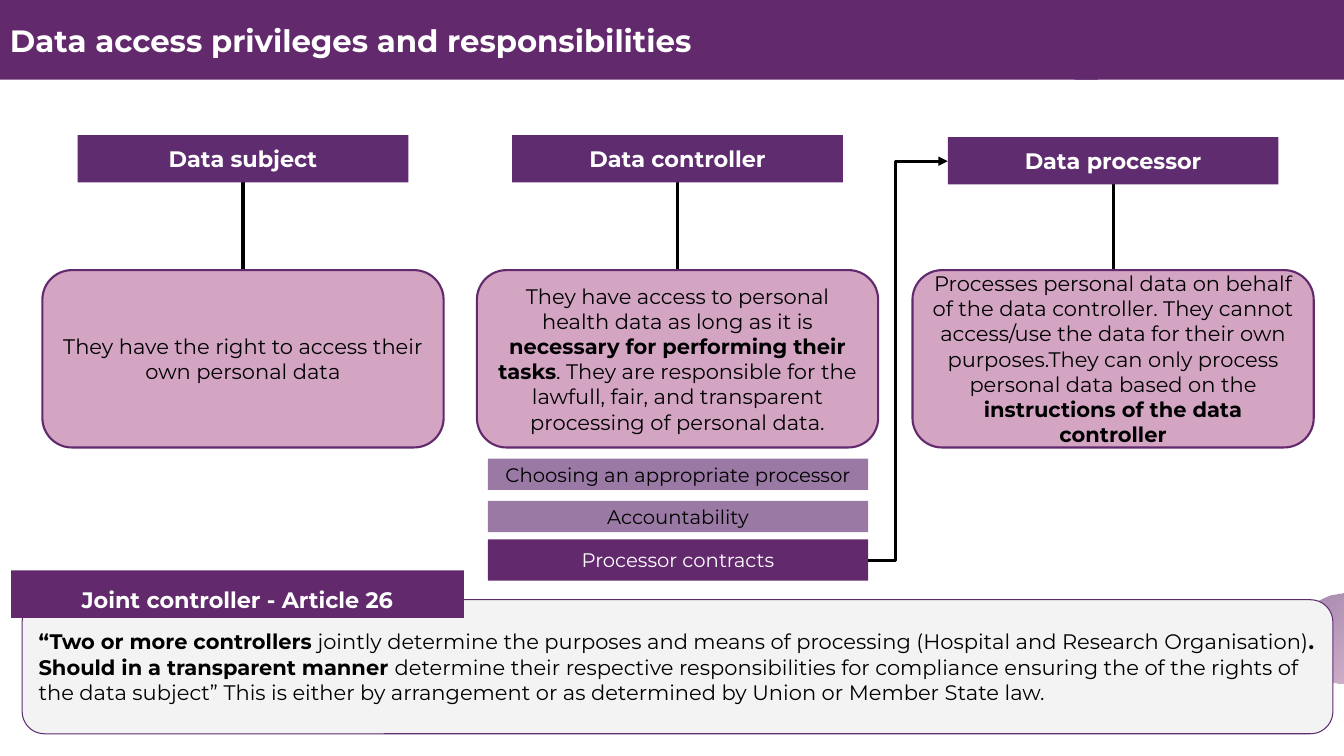
"""Build the slide on data access privileges and responsibilities."""
from dataclasses import dataclass

from lxml.etree import SubElement
from pptx import Presentation
from pptx.dml.color import RGBColor
from pptx.enum.shapes import MSO_CONNECTOR, MSO_SHAPE
from pptx.enum.text import MSO_ANCHOR, PP_ALIGN
from pptx.oxml.ns import qn
from pptx.shapes.autoshape import Shape
from pptx.shapes.connector import Connector
from pptx.util import Pt

PX = 9144
FONT = "Montserrat"
PLUM = RGBColor(0x62, 0x29, 0x6D)
GRAPE = RGBColor(0x5F, 0x2D, 0x6F)
MAUVE = RGBColor(0x9A, 0x7A, 0xA4)
PINK = RGBColor(0xD3, 0xA5, 0xC3)
PALE = RGBColor(0xF3, 0xF3, 0xF3)
WHITE = RGBColor(0xFF, 0xFF, 0xFF)
BLACK = RGBColor(0, 0, 0)


@dataclass
class Run:
    text: str
    bold: bool = False


@dataclass
class Role:
    name: str
    top: int
    site: int
    duty: list[Run]


@dataclass
class Task:
    text: str
    top: int
    high: int
    fill: RGBColor
    ink: RGBColor


ROLES = [
    Role("Data subject", 134, 2, [
        Run("They have the right to access their own personal data")]),
    Role("Data controller", 134, 0, [
        Run("They have access to personal health data as long as it is "),
        Run("necessary for performing their tasks", True),
        Run(". They are responsible for the lawfull, fair, and transparent "
            "processing of personal data.")]),
    Role("Data processor", 136, 0, [
        Run("Processes personal data on behalf of the data controller. They "
            "cannot access/use the data for their own purposes.They can only "
            "process personal data based on the "),
        Run("instructions of the data controller", True)]),
]
TASKS = [
    Task("Choosing an appropriate processor", 455, 31, MAUVE, BLACK),
    Task("Accountability", 497, 31, MAUVE, BLACK),
    Task("Processor contracts", 535, 41, PLUM, WHITE),
]
JOINT = [
    Run("“Two or more controllers", True),
    Run(" jointly determine the purposes and means of processing "
        "(Hospital and Research Organisation)"),
    Run(". Should in a transparent manner ", True),
    Run("determine their respective responsibilities for compliance ensuring "
        "the of the rights of the data subject” This is either by arrangement "
        "or as determined by Union or Member State law."),
]


def add_box(shapes, x: int, y: int, w: int, h: int, fill: RGBColor | None,
            edge: RGBColor | None = None, width: float = 1.5) -> Shape:
    """Add a plain box, rounded when it has an edge."""
    kind = MSO_SHAPE.ROUNDED_RECTANGLE if edge else MSO_SHAPE.RECTANGLE
    box = shapes.add_shape(kind, x * PX, y * PX, w * PX, h * PX)
    box.shadow.inherit = False
    if fill is not None:
        box.fill.solid()
        box.fill.fore_color.rgb = fill
    if edge:
        box.line.color.rgb = edge
        box.line.width = Pt(width)
    else:
        box.line.fill.background()
    return box


def add_text(box: Shape, runs: list[Run], size: int, ink: RGBColor,
             align: PP_ALIGN = PP_ALIGN.CENTER, pad: int = 10, after: int = 0):
    """Write one paragraph of runs in a box and return it."""
    frame = box.text_frame
    frame.word_wrap = True
    frame.vertical_anchor = MSO_ANCHOR.MIDDLE
    frame.margin_left = frame.margin_right = 10 * PX
    frame.margin_top = frame.margin_bottom = pad * PX
    para = frame.paragraphs[0]
    para.alignment = align
    para.space_after = Pt(after)
    for item in runs:
        run = para.add_run()
        run.text = item.text
        font = run.font
        font.name, font.size, font.bold = FONT, Pt(size), item.bold
        font.color.rgb = ink
    return para


def add_link(shapes, kind: MSO_CONNECTOR, x: int, y: int, to_x: int, to_y: int,
             head: bool) -> Connector:
    """Add a black connector, with or without an arrowhead."""
    link = shapes.add_connector(kind, x * PX, y * PX, to_x * PX, to_y * PX)
    link.line.color.rgb = BLACK
    link.line.width = Pt(2.25)
    if head:
        SubElement(link.line._get_or_add_ln(), qn("a:tailEnd"), type="triangle")
    SubElement(link._element.spPr, qn("a:effectLst"))
    return link


def add_orb(shapes) -> None:
    """Add the faded disc at the right edge."""
    orb = shapes.add_shape(MSO_SHAPE.OVAL, 1288 * PX, 589 * PX, 89 * PX, 89 * PX)
    orb.shadow.inherit = False
    orb.line.fill.background()
    props = orb._element.spPr
    grad = SubElement(props, qn("a:gradFill"), rotWithShape="1")
    stops = SubElement(grad, qn("a:gsLst"))
    for pos, tint, alpha in ((0, PINK, 71), (100, GRAPE, 56)):
        stop = SubElement(stops, qn("a:gs"), pos=str(pos * 1000))
        color = SubElement(stop, qn("a:srgbClr"), val=str(tint))
        SubElement(color, qn("a:alpha"), val=str(alpha * 1000))
    shade = SubElement(grad, qn("a:path"), path="circle")
    SubElement(shade, qn("a:fillToRect"), l="100000", t="100000")
    props.insert(2, grad)


def main() -> None:
    """Draw the slide and save it."""
    deck = Presentation()
    deck.slide_width, deck.slide_height = 1333 * PX, 750 * PX
    shapes = deck.slides.add_slide(deck.slide_layouts[6]).shapes

    add_orb(shapes)
    lefts = [42 + 863 * col // 2 for col in range(len(ROLES))]
    stems = [add_link(shapes, MSO_CONNECTOR.STRAIGHT, x + 199, role.top,
                      x + 199, 444, col < 2)
             for col, (x, role) in enumerate(zip(lefts, ROLES))]

    title = add_box(shapes, 0, 0, 1089, 79, PLUM)
    add_text(title, [Run("Data access privileges and responsibilities", True)],
             22, WHITE, PP_ALIGN.LEFT, 5)
    add_box(shapes, 1066, 0, 267, 79, PLUM)

    for x, role, stem in zip(lefts, ROLES, stems):
        label = add_box(shapes, x + 35, role.top, 328, 47, GRAPE)
        add_text(label, [Run(role.name, True)], 16, WHITE, after=10)
        card = add_box(shapes, x, 268, 398, 176, PINK, PLUM)
        add_text(card, role.duty, 15, BLACK)
        stem.begin_connect(label, role.site)
        stem.end_connect(card, 2)

    for task in TASKS:
        bar = add_box(shapes, 484, task.top, 377, task.high, task.fill)
        add_text(bar, [Run(task.text)], 14, task.ink)

    panel = add_box(shapes, 22, 595, 1300, 133, PALE, GRAPE, 0.75)
    add_text(panel, JOINT, 15, BLACK, PP_ALIGN.LEFT)
    tab = add_box(shapes, 11, 566, 449, 47, PLUM)
    para = add_text(tab, [Run("Joint controller - Article 26", True)],
                    16, WHITE, after=6)
    para.line_spacing = 1.2
    tab.text_frame.vertical_anchor = MSO_ANCHOR.TOP

    bend = add_link(shapes, MSO_CONNECTOR.ELBOW, 861, 556, 940, 160, True)
    guides = bend._element.spPr.find(qn("a:prstGeom")).get_or_add_avLst()
    SubElement(guides, qn("a:gd"), name="adj1", fmla="val 34400")
    deck.save("out.pptx")


if __name__ == "__main__":
    main()
